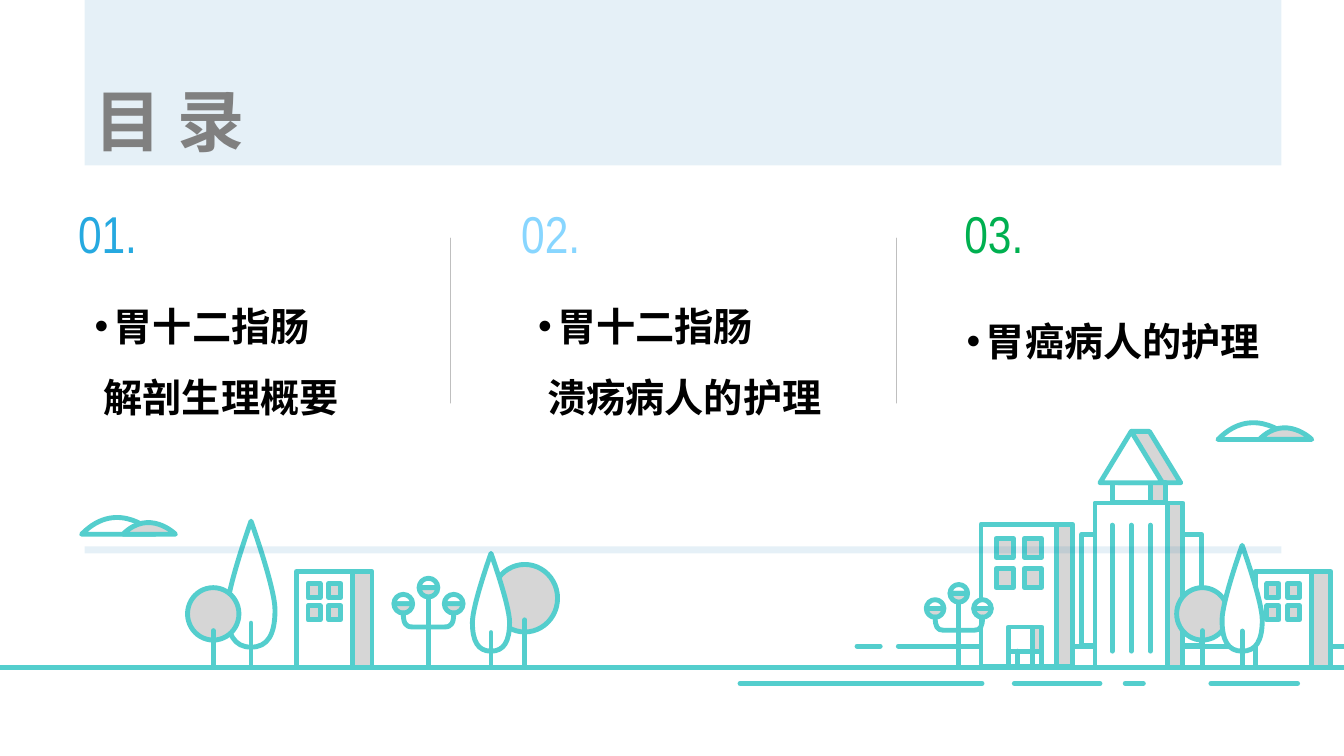
from dataclasses import dataclass

from pptx import Presentation
from pptx.dml.color import RGBColor
from pptx.enum.shapes import MSO_CONNECTOR as Connector, MSO_SHAPE as Preset
from pptx.enum.text import MSO_ANCHOR as Anchor, MSO_AUTO_SIZE as AutoSize, PP_ALIGN as Align
from pptx.oxml.ns import qn
from pptx.oxml.xmlchemy import OxmlElement
from pptx.util import Inches, Pt


@dataclass(frozen=True)
class Theme:
    outline: str = "54CECD"
    shade: str = "D6D6D6"
    paper: str = "FFFFFF"
    band: str = "0074B3"
    heading: str = "808080"
    body: str = "000000"
    divider: str = "BFBFBF"
    numbers: tuple = ("26A9E0", "88D6FF", "00B050")
    stroke: float = 3.5
    hairline: float = 0.25
    title_size: int = 48
    number_size: int = 37
    body_size: int = 28
    title_font: str = "Arial"
    number_font: str = "Arial Narrow"
    body_font: str = "Noto Sans CJK SC"


def grid(units):
    """Turn grid columns or rows, ten to the inch, into a length."""
    return Inches(units / 10)


def child(parent, tag, **attributes):
    element = OxmlElement(tag)
    for name, value in attributes.items():
        element.set(name, value)
    parent.append(element)
    return element


class Page:
    def __init__(self, slide, theme):
        self.slide, self.shapes, self.theme = slide, slide.shapes, theme

    def stroke(self, shape, color, width):
        shape.line.color.rgb = RGBColor.from_string(color)
        shape.line.width = Pt(width)
        line = shape._element.spPr.find(qn("a:ln"))
        line.set("cap", "rnd")
        child(line, "a:round")

    def paint(self, shape, fill):
        shape.shadow.inherit = False
        if fill:
            shape.fill.solid()
            shape.fill.fore_color.rgb = RGBColor.from_string(fill)
        else:
            shape.fill.background()
        self.stroke(shape, self.theme.outline, self.theme.stroke)

    def tint(self, shape):
        """Fill with the band colour at ten percent, without a line."""
        shape.fill.solid()
        shape.fill.fore_color.rgb = RGBColor.from_string(self.theme.band)
        color = shape._element.spPr.find(qn("a:solidFill"))[0]
        child(color, "a:alpha", val="10000")
        shape.line.fill.background()

    def preset(self, left, top, width, height, fill=None, kind=Preset.RECTANGLE):
        shape = self.shapes.add_shape(kind, *map(grid, (left, top, width, height)))
        self.paint(shape, fill)
        return shape

    def line(self, x1, y1, x2, y2, color=None, width=None):
        connector = self.shapes.add_connector(Connector.STRAIGHT, *map(grid, (x1, y1, x2, y2)))
        self.stroke(connector, color or self.theme.outline, width or self.theme.stroke)
        child(connector._element.spPr, "a:effectLst")

    def outline(self, start, segments, fill=None, close=True):
        """Draw segments of one point (straight) or three points (cubic curve)."""
        builder = self.shapes.build_freeform(*map(grid, start))
        builder.add_line_segments([(grid(x), grid(y)) for segment in segments for x, y in segment], close=close)
        shape = builder.convert_to_shape()
        steps = iter(list(shape._element.iter(qn("a:lnTo"))))
        for segment in segments:
            first, *others = [next(steps) for _ in segment]
            if others:
                bend = OxmlElement("a:cubicBezTo")
                first.addprevious(bend)
                for step in (first, *others):
                    bend.append(step[0])
                    step.getparent().remove(step)
        self.paint(shape, fill)

    def cloud(self, left, base):
        for offset, width, rise, fill in ((0, 7.3, 3.75, self.theme.paper),
                                          (4.1, 5.2, 2.6, self.theme.shade)):
            start, end = (left + offset, base), (left + offset + width, base)
            peak = (left + offset + width / 2, base - rise)
            self.outline(start, [(end,), (end, peak, start)], fill)

    def cypress(self, x, top, height, ground):
        half = 0.19 * height
        tip, foot = (x, top), (x, top + height)

        def side(sign):
            wide = x + sign * half
            return ((wide, top + 0.53 * height), (wide, top + 0.705 * height),
                    (wide, top + 0.9 * height), (x + sign * 0.7 * half, foot[1]))

        (upper, belly, lower, base), right = side(-1), side(1)
        self.outline(tip, [(tip, upper, belly), (lower, base, foot),
                           (right[3], right[2], right[1]), (right[0], tip, tip)], self.theme.paper)
        self.line(x, ground, x, top + 0.81 * height)

    def round_tree(self, left, top, width, height, ground):
        self.preset(left, top, width, height, self.theme.shade, Preset.OVAL)
        self.line(left + width / 2, ground, left + width / 2, top + 0.82 * height)

    def house(self, left, top, front, side, height, window, inset, pitch):
        """Front and shaded side, with two by two windows."""
        self.preset(left, top, front, height, self.theme.paper)
        self.preset(left + front, top, side, height, self.theme.shade)
        for row in range(2):
            for column in range(2):
                self.preset(left + inset[0] + column * pitch[0], top + inset[1] + row * pitch[1],
                            *window, self.theme.shade)

    def cottage(self, left):
        self.house(left, 56.7, 5.6, 1.9, 9.5, (1.2, 1.4), (1.15, 1.2), (2.05, 2.2))

    def lamp(self, x, ground, scale=1):
        def spot(dx, rise):
            return x + dx * scale, ground - rise * scale

        self.line(x, ground, *spot(0, 6.7))
        for dx, rise in ((-2.5, 6.2), (2.5, 6.2), (0, 7.8)):
            for sign, fill in ((1, self.theme.paper), (-1, self.theme.shade)):
                def rim(across, up):
                    return spot(dx + 0.93 * across, rise + 0.93 * up * sign)

                self.outline(rim(-1, 0), [(rim(-1, 0.55), rim(-0.55, 1), rim(0, 1)),
                                          (rim(0.55, 1), rim(1, 0.55), rim(1, 0))], fill)
        for sign in (-1, 1):
            self.outline(spot(0, 3.9), [(spot(sign * 1.6, 3.9),),
                                        (spot(sign * 2.3, 3.9), spot(sign * 2.5, 4.3), spot(sign * 2.5, 5.3))],
                         close=False)

    def style(self, para, font, size, color, bold=False):
        for span in para.runs:
            span.font.name, span.font.size, span.font.bold = font, Pt(size), bold
            span.font.color.rgb = RGBColor.from_string(color)
            child(span.font._element, "a:ea", typeface=self.theme.body_font)

    def title(self, text):
        box = self.shapes.title
        box.left, box.top, box.width, box.height = map(grid, (8.4, 0, 118.7, 16.4))
        self.tint(box)
        frame = box.text_frame
        frame.text, frame.vertical_anchor, frame.auto_size = text, Anchor.BOTTOM, AutoSize.NONE
        frame.paragraphs[0].alignment = Align.LEFT
        self.style(frame.paragraphs[0], self.theme.title_font, self.theme.title_size,
                   self.theme.heading, bold=True)

    def number(self, left, text, color):
        frame = self.shapes.add_textbox(*map(grid, (left, 20.3, 6, 5.6))).text_frame
        frame.margin_left = frame.margin_top = frame.margin_right = frame.margin_bottom = 0
        frame.word_wrap, frame.vertical_anchor, frame.text = False, Anchor.MIDDLE, text
        frame.paragraphs[0].alignment = Align.RIGHT
        self.style(frame.paragraphs[0], self.theme.number_font, self.theme.number_size, color)

    def topic(self, left, top, width, text):
        """Bulleted first line; any following line is only indented."""
        frame = self.shapes.add_textbox(*map(grid, (left, top, width, 13.4))).text_frame
        frame.word_wrap, frame.text = True, text
        for index, para in enumerate(frame.paragraphs):
            para.line_spacing = 1.5
            self.style(para, self.theme.body_font, self.theme.body_size, self.theme.body, bold=True)
            properties = para._p.get_or_add_pPr()
            properties.set("marL", str(grid(0.9 if index else 1.9)))
            if index == 0:
                properties.set("indent", str(-grid(1.9)))
                child(properties, "a:buFont", typeface="Arial")
                child(properties, "a:buChar", char="•")


def draw_city(page):
    paper, shade = page.theme.paper, page.theme.shade
    page.line(89.1, 64.1, 133.3, 64.1)
    page.line(85, 64.1, 87.3, 64.1)
    page.preset(107.3, 53, 11.9, 11)
    page.line(0, 66.2, 133.3, 66.2)
    page.house(97.3, 52, 7.5, 1.6, 14.1, (1.7, 1.9), (1.5, 1.4), (2.8, 3))
    page.cottage(124.5)
    page.outline((112.2, 42.8), [((114, 42.8),), ((117.1, 47.9),), ((110.9, 47.9),),
                                 ((113.1, 44.3),), ((112.2, 44.3),)], shade)
    page.preset(108.6, 49.9, 7.2, 16.3, paper)
    page.preset(115.8, 49.9, 1.5, 16.3, shade)
    page.preset(114.1, 47.9, 1.5, 2, shade)
    for column in range(3):
        x = 110.3 + 1.9 * column
        page.line(x, 64.6, x, 52.1)
    page.preset(110.3, 47.9, 3.8, 2)
    page.outline((112.2, 42.8), [((109.1, 47.9),), ((115.3, 47.9),)], paper)
    page.round_tree(116.7, 58.3, 5.1, 5.2, 66.2)
    page.cypress(123.2, 54.1, 10.5, 66.2)
    for start, end in ((73.4, 97.4), (100.6, 109.1), (111.6, 113.4), (120.1, 128.7)):
        page.line(start, 67.8, end, 67.8)
    page.lamp(95.1, 66.2, 0.94)
    page.preset(100, 62.2, 2.4, 2.4, paper)
    page.preset(102.4, 62.2, 0.9, 2.4, shade)
    for x in (100, 100.9, 102.4, 103.3):
        page.line(x, 64.6, x, 66.2)
    page.cloud(120.8, 43.6)


def draw_park(page):
    ground = 66.1
    page.round_tree(48.8, 56, 6.5, 6.7, ground)
    page.cypress(24.9, 51.7, 12.5, ground)
    page.lamp(42.5, ground)
    page.round_tree(18.6, 58.3, 5.1, 5.2, ground)
    page.cypress(48.7, 54.9, 9.7, ground)
    page.cloud(8.1, 53)
    page.cottage(29.4)


def main():
    deck = Presentation()
    deck.slide_width, deck.slide_height = Inches(13.33), Inches(7.5)
    page = Page(deck.slides.add_slide(deck.slide_layouts[5]), Theme())
    draw_city(page)
    draw_park(page)
    page.title("目 录")
    page.tint(page.preset(8.4, 54.2, 118.7, 0.7))
    topics = ((8.4, 27.2, 31.6, "胃十二指肠\n解剖生理概要"),
              (52.4, 27.2, 35.7, "胃十二指肠\n溃疡病人的护理"),
              (94.9, 28.7, 32.6, "胃癌病人的护理"))
    for index, (topic, color) in enumerate(zip(topics, page.theme.numbers)):
        page.number(7.6 + 43.95 * index, f"{index + 1:02}.", color)
        page.topic(*topic)
    for x in (44.65, 88.9):
        page.line(x, 23.6, x, 40, page.theme.divider, page.theme.hairline)
    deck.save("out.pptx")


if __name__ == "__main__":
    main()
